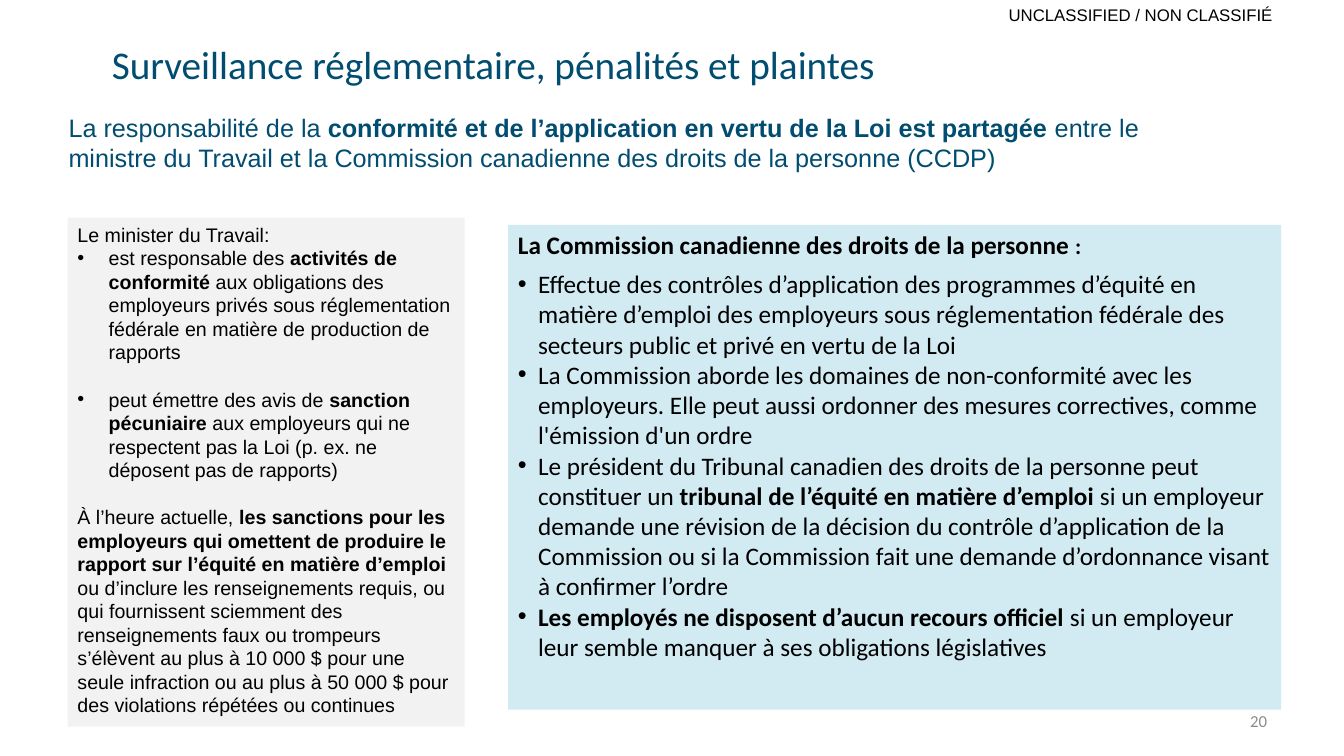
from dataclasses import dataclass
from typing import Any

import pptx
import pptx.dml.color
import pptx.enum.shapes
import pptx.enum.text
import pptx.oxml
import pptx.oxml.ns
import pptx.util

COLOURS = {
    "title": "004D71",
    "text": "000000",
    "number": "8C8C8C",
    "minister": "F2F2F2",
    "commission": "D2EBF3",
}
ALIGN = pptx.enum.text.PP_ALIGN
ANCHOR = pptx.enum.text.MSO_ANCHOR

# Grid of 160 columns by 90 rows
SLIDE_WIDTH, SLIDE_HEIGHT = pptx.util.Inches(13.33), pptx.util.Inches(7.5)
COLUMN, ROW = SLIDE_WIDTH / 160, SLIDE_HEIGHT / 90


@dataclass
class Run:
    text: str
    bold: bool = False
    size: float | None = None


@dataclass
class Paragraph:
    runs: list[Run]
    bullet: bool = False
    before: float = 0
    after: float = 0


@dataclass
class Block:
    column: float
    row: float
    columns: float
    rows: float
    paragraphs: list[Paragraph]
    font: str
    size: float
    colour: str = "text"
    fill: str | None = None
    align: Any = ALIGN.LEFT
    anchor: Any = ANCHOR.TOP
    inset: bool = True
    indent: float = 0


def rgb(name: str) -> pptx.dml.color.RGBColor:
    return pptx.dml.color.RGBColor.from_string(COLOURS[name])


def apply(target: Any, values: dict[str, Any]) -> None:
    for name, value in values.items():
        setattr(target, name, value)


def set_bullet(paragraph: Any, bullet: bool, indent: float) -> None:
    properties = paragraph._p.get_or_add_pPr()
    hang = int(pptx.util.Inches(indent)) if bullet else 0
    properties.set("marL", str(hang))
    properties.set("indent", str(-hang))
    namespace = pptx.oxml.ns.nsdecls("a")
    elements = [f'<a:buFont {namespace} typeface="Arial"/>',
                f'<a:buChar {namespace} char="•"/>'] if bullet else [f"<a:buNone {namespace}/>"]
    for element in elements:
        properties.append(pptx.oxml.parse_xml(element))


def write_block(shape: Any, block: Block) -> None:
    apply(shape, {
        "left": round(block.column * COLUMN), "top": round(block.row * ROW),
        "width": round(block.columns * COLUMN), "height": round(block.rows * ROW),
    })
    frame = shape.text_frame
    apply(frame, {"word_wrap": True, "auto_size": pptx.enum.text.MSO_AUTO_SIZE.NONE,
                  "vertical_anchor": block.anchor})
    if not block.inset:
        apply(frame, dict.fromkeys(
            ("margin_left", "margin_top", "margin_right", "margin_bottom"), 0))
    for index, content in enumerate(block.paragraphs):
        paragraph = frame.add_paragraph() if index else frame.paragraphs[0]
        apply(paragraph, {"alignment": block.align,
                          "space_before": pptx.util.Pt(content.before),
                          "space_after": pptx.util.Pt(content.after)})
        set_bullet(paragraph, content.bullet, block.indent)
        for part in content.runs:
            run = paragraph.add_run()
            run.text = part.text
            apply(run.font, {"name": block.font, "bold": part.bold,
                             "size": pptx.util.Pt(part.size or block.size)})
            run.font.color.rgb = rgb(block.colour)


def add_text(slide: Any, block: Block) -> None:
    write_block(slide.shapes.add_textbox(0, 0, 0, 0), block)


def add_panel(slide: Any, block: Block) -> None:
    shape = slide.shapes.add_shape(pptx.enum.shapes.MSO_SHAPE.RECTANGLE, 0, 0, 0, 0)
    shape.shadow.inherit = False
    shape.fill.solid()
    shape.fill.fore_color.rgb = rgb(block.fill)
    shape.line.fill.background()
    write_block(shape, block)


# Heading texts
MARKING = Block(111.6, 0.6, 48.4, 2.4, [Paragraph([Run("UNCLASSIFIED / NON CLASSIFIÉ")])],
                "Arial", 12, align=ALIGN.CENTER, anchor=ANCHOR.MIDDLE, inset=False)
NUMBER = Block(114.72, 83.4, 37.32, 4.8, [Paragraph([Run("20")])],
               "Calibri", 12, "number", align=ALIGN.RIGHT, anchor=ANCHOR.MIDDLE)
TITLE = Block(13.32, 1.8, 95.04, 11.52,
              [Paragraph([Run("Surveillance réglementaire, pénalités et plaintes")])],
              "Calibri", 28, "title", anchor=ANCHOR.MIDDLE, inset=False)
INTRODUCTION = Block(8.16, 13.32, 132.48, 9.84, [Paragraph([
    Run("La responsabilité de la "),
    Run("conformité et de l’application en vertu de la Loi est partagée", True),
    Run(" entre le ministre du Travail et la Commission canadienne des droits "
        "de la personne (CCDP)"),
])], "Arial", 18, "title", inset=False)

# Panels
LINE_GAP = 16.8
MINISTER = Block(8.04, 25.92, 47.28, 60.6, [
    Paragraph([Run("Le minister du Travail:")]),
    Paragraph([
        Run("est responsable des "), Run("activités de conformité ", True),
        Run("aux obligations des employeurs privés sous réglementation fédérale "
            "en matière de production de rapports"),
    ], bullet=True),
    Paragraph([
        Run("peut émettre des avis de "), Run("sanction pécuniaire", True),
        Run(" aux employeurs qui ne respectent pas la Loi (p. ex. ne déposent pas de rapports)"),
    ], bullet=True, before=LINE_GAP),
    Paragraph([
        Run("À l’heure actuelle, "),
        Run("les sanctions pour les employeurs qui omettent de produire le rapport "
            "sur l’équité en matière d’emploi ", True),
        Run("ou d’inclure les renseignements requis, ou qui fournissent sciemment des "
            "renseignements faux ou trompeurs s’élèvent au plus à 10 000 $ pour une seule "
            "infraction ou au plus à 50 000 $ pour des violations répétées ou continues"),
    ], before=LINE_GAP),
], "Arial", 14, fill="minister", indent=0.31)
COMMISSION = Block(60.48, 26.76, 92.04, 57.72, [
    Paragraph([Run("La Commission canadienne des droits de la personne ", True),
               Run(":", True, 16)], after=6),
    Paragraph([Run(
        "Effectue des contrôles d’application des programmes d’équité en matière d’emploi "
        "des employeurs sous réglementation fédérale des secteurs public et privé "
        "en vertu de la Loi")], bullet=True),
    Paragraph([Run(
        "La Commission aborde les domaines de non-conformité avec les employeurs. Elle peut "
        "aussi ordonner des mesures correctives, comme l'émission d'un ordre")], bullet=True),
    Paragraph([
        Run("Le président du Tribunal canadien des droits de la personne peut constituer un "),
        Run("tribunal de l’équité en matière d’emploi ", True),
        Run("si un employeur demande une révision de la décision du contrôle d’application "
            "de la Commission ou si la Commission fait une demande d’ordonnance visant "
            "à confirmer l’ordre"),
    ], bullet=True),
    Paragraph([
        Run("Les employés ne disposent d’aucun recours officiel ", True),
        Run("si un employeur leur semble manquer à ses obligations législatives"),
    ], bullet=True),
], "Calibri", 18, fill="commission", indent=0.2)


def main() -> None:
    presentation = pptx.Presentation()
    apply(presentation, {"slide_width": SLIDE_WIDTH, "slide_height": SLIDE_HEIGHT})
    slide = presentation.slides.add_slide(presentation.slide_layouts[1])
    write_block(slide.shapes.title, TITLE)
    write_block(slide.placeholders[1], INTRODUCTION)
    for block in (MARKING, NUMBER):
        add_text(slide, block)
    for block in (MINISTER, COMMISSION):
        add_panel(slide, block)
    presentation.save("out.pptx")


if __name__ == "__main__":
    main()
